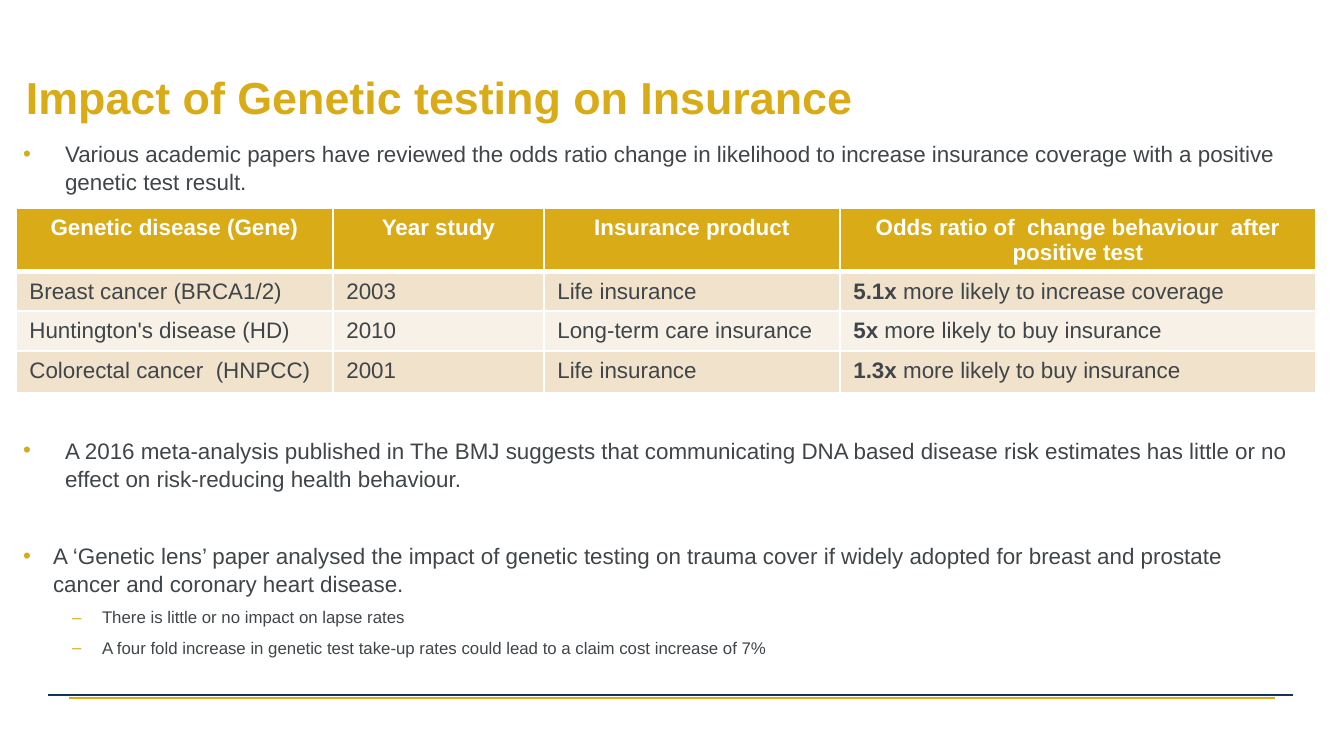
from lxml import etree
from pptx import Presentation
from pptx.dml.color import RGBColor
from pptx.enum.shapes import MSO_CONNECTOR
from pptx.enum.text import MSO_ANCHOR, MSO_AUTO_SIZE, PP_ALIGN
from pptx.oxml.ns import qn
from pptx.util import Pt

EMU_PER_PX = 914400 / 134.4
STRAIGHT = MSO_CONNECTOR.STRAIGHT
MIDDLE, TOP = MSO_ANCHOR.MIDDLE, MSO_ANCHOR.TOP
NO_AUTOFIT = MSO_AUTO_SIZE.NONE
LEFT, CENTER = PP_ALIGN.LEFT, PP_ALIGN.CENTER

GOLD, NAVY, WHITE, INK = "D9AB16", "113458", "FFFFFF", "3F4548"
BANDS = ["F1E2CC", "F8F1E8"]

HEADINGS = [
    "Genetic disease (Gene)",
    "Year study",
    "Insurance product",
    "Odds ratio of  change behaviour  after positive test",
]
# The last two entries of a study are the odds ratio and the behaviour it describes.
STUDIES = [
    ("Breast cancer (BRCA1/2)", "2003", "Life insurance",
     "5.1x", " more likely to increase coverage"),
    ("Huntington's disease (HD)", "2010", "Long-term care insurance",
     "5x", " more likely to buy insurance"),
    ("Colorectal cancer  (HNPCC)", "2001", "Life insurance",
     "1.3x", " more likely to buy insurance"),
]
COLUMN_WIDTHS = [317, 211, 296, 476]
ROW_HEIGHTS = [64, 39, 40, 42]

# text, level, text indent, hanging indent, space before, size
FINDINGS = [
    ("Various academic papers have reviewed the odds ratio change in likelihood to "
     "increase insurance coverage with a positive genetic test result.", 0, 42, 42, 0, 12),
    ("A 2016 meta-analysis published in The BMJ suggests that communicating DNA based "
     "disease risk estimates has little or no effect on risk-reducing health behaviour.",
     0, 42, 42, 240, 12),
    ("A ‘Genetic lens’ paper analysed the impact of genetic testing on trauma cover if "
     "widely adopted for breast and prostate cancer and coronary heart disease.",
     0, 30, 30, 49, 12),
    ("There is little or no impact on lapse rates", 1, 79, 30, 9, 9),
    ("A four fold increase in genetic test take-up rates could lead to a claim cost "
     "increase of 7%", 1, 79, 30, 9, 9),
]
BULLETS = "•–"


def px(length):
    return round(length * EMU_PER_PX)


def rgb(color):
    return RGBColor.from_string(color)


def write(paragraph, text, size=12, color=INK, bold=False, align=LEFT):
    paragraph.alignment = align
    run = paragraph.add_run()
    run.text = text
    run.font.name = "Arial"
    run.font.size = Pt(size)
    run.font.bold = bold
    run.font.color.rgb = rgb(color)


def place(placeholder, box, anchor):
    """Move a placeholder to a box and return its text frame."""
    placeholder.left, placeholder.top, placeholder.width, placeholder.height = map(px, box)
    frame = placeholder.text_frame
    frame.word_wrap = True
    frame.auto_size = NO_AUTOFIT
    frame.vertical_anchor = anchor
    frame.margin_left = frame.margin_right = px(10)
    frame.margin_top = frame.margin_bottom = px(5)
    return frame


def set_bullet(paragraph, char, indent, hanging):
    properties = paragraph._p.get_or_add_pPr()
    properties.set("marL", str(px(indent)))
    properties.set("indent", str(px(-hanging)))
    bullet_color = etree.SubElement(properties, qn("a:buClr"))
    etree.SubElement(bullet_color, qn("a:srgbClr"), val=GOLD)
    etree.SubElement(properties, qn("a:buFont"), typeface="Arial")
    etree.SubElement(properties, qn("a:buChar"), char=char)


def set_borders(cell, **widths):
    """Give the cell white borders, with widths in points keyed by side."""
    properties = cell._tc.get_or_add_tcPr()
    for side in "LRTB":
        border = etree.SubElement(properties, qn("a:ln" + side),
                                  w=str(Pt(widths.get(side, 1))))
        fill = etree.SubElement(border, qn("a:solidFill"))
        etree.SubElement(fill, qn("a:srgbClr"), val=WHITE)


def style_cell(cell, fill, **borders):
    set_borders(cell, **borders)
    cell.fill.solid()
    cell.fill.fore_color.rgb = rgb(fill)


def add_title(slide, box):
    frame = place(slide.shapes.title, box, MIDDLE)
    write(frame.paragraphs[0], "Impact of Genetic testing on Insurance",
          size=24, color=GOLD, bold=True)


def add_findings(slide, box):
    frame = place(slide.placeholders[1], box, TOP)
    for index, (text, level, indent, hanging, gap, size) in enumerate(FINDINGS):
        paragraph = frame.add_paragraph() if index else frame.paragraphs[0]
        paragraph.level = level
        set_bullet(paragraph, BULLETS[level], indent, hanging)
        paragraph.line_spacing = 1.05
        paragraph.space_before = px(gap)
        write(paragraph, text, size=size)


def add_studies(slide, left, top):
    table = slide.shapes.add_table(
        len(ROW_HEIGHTS), len(COLUMN_WIDTHS), px(left), px(top),
        px(sum(COLUMN_WIDTHS)), px(sum(ROW_HEIGHTS))).table
    for column, width in zip(table.columns, COLUMN_WIDTHS):
        column.width = px(width)
    for row, height in zip(table.rows, ROW_HEIGHTS):
        row.height = px(height)

    for index, heading in enumerate(HEADINGS):
        cell = table.cell(0, index)
        style_cell(cell, GOLD, B=3)
        write(cell.text_frame.paragraphs[0], heading, color=WHITE, bold=True, align=CENTER)

    for row, (*facts, ratio, behaviour) in enumerate(STUDIES, start=1):
        borders = {"T": 3} if row == 1 else {}
        for index in range(len(HEADINGS)):
            style_cell(table.cell(row, index), BANDS[(row - 1) % 2], **borders)
        for index, fact in enumerate(facts):
            write(table.cell(row, index).text_frame.paragraphs[0], fact)
        odds = table.cell(row, len(facts)).text_frame.paragraphs[0]
        write(odds, ratio, bold=True)
        write(odds, behaviour)


def add_rule(slide, left, right, y, color, width):
    rule = slide.shapes.add_connector(STRAIGHT, px(left), px(y), px(right), px(y))
    rule.line.color.rgb = rgb(color)
    rule.line.width = Pt(width)
    etree.SubElement(rule._element.spPr, qn("a:effectLst"))


def add_footer_rules(slide, left, top, width):
    add_rule(slide, left + 21, left + width - 18, top + 3, GOLD, 1)
    add_rule(slide, left, left + width, top, NAVY, 0.75)


def main():
    presentation = Presentation()
    presentation.slide_width, presentation.slide_height = px(1344), px(756)
    slide = presentation.slides.add_slide(presentation.slide_layouts[1])
    add_footer_rules(slide, 48, 695, 1245)
    add_title(slide, (16, 13, 1210, 168))
    add_studies(slide, 16, 208)
    add_findings(slide, (13, 134, 1290, 536))
    presentation.save("out.pptx")


if __name__ == "__main__":
    main()
